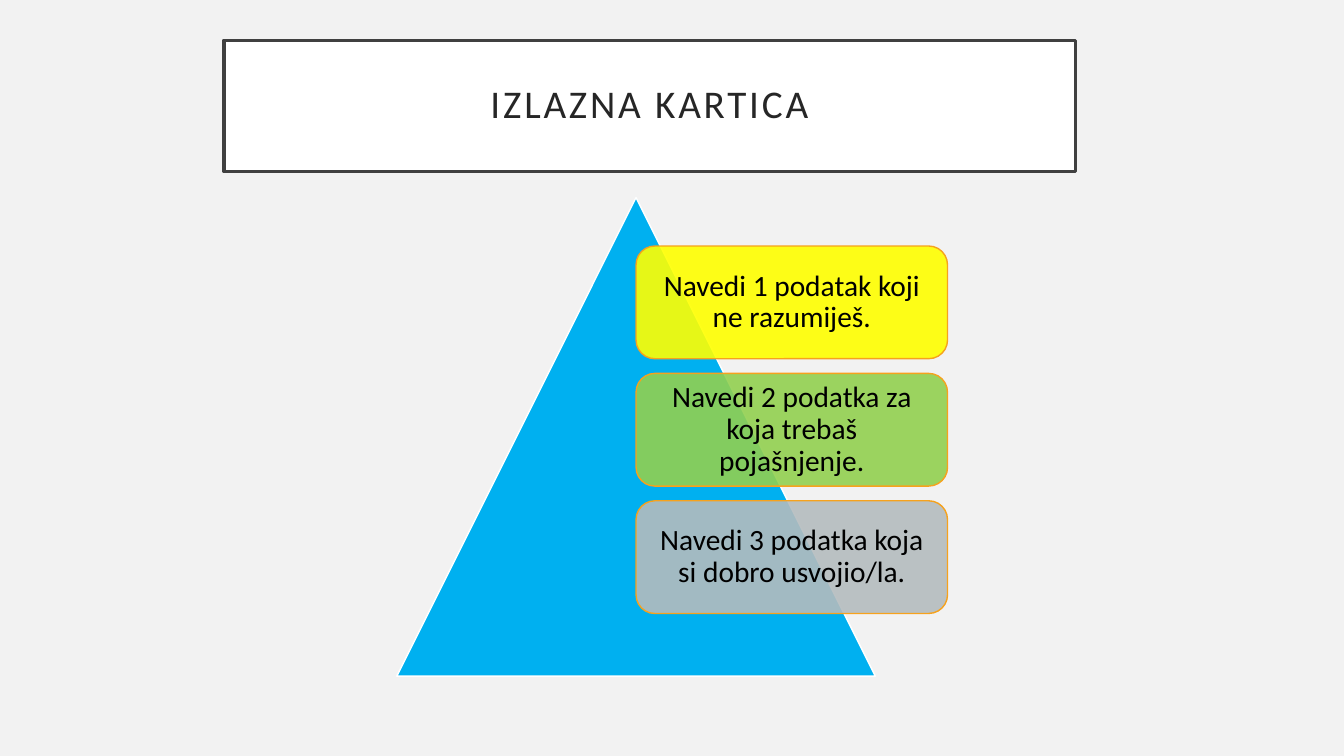
from dataclasses import dataclass

from lxml.etree import SubElement
from pptx import Presentation
from pptx.dml.color import RGBColor
from pptx.enum.shapes import MSO_SHAPE as Preset
from pptx.enum.text import MSO_ANCHOR as Anchor, PP_ALIGN as Align
from pptx.oxml.ns import qn
from pptx.util import Cm, Pt


@dataclass(frozen=True)
class Theme:
    font: str = "Calibri"
    title_size: int = 28
    card_size: int = 21
    background: str = "F2F2F2"
    white: str = "FFFFFF"
    title_line: str = "404040"
    title_text: str = "262626"
    pyramid: str = "00B0F0"
    card_line: str = "F6A21D"
    card_text: str = "000000"
    card_fills: tuple = ("FFFF00", "92D050", "B4BCBE")


THEME = Theme()
CARD_TEXTS = (
    "Navedi 1 podatak koji ne razumiješ.",
    "Navedi 2 podatka za koja trebaš pojašnjenje.",
    "Navedi 3 podatka koja si dobro usvojio/la.",
)


def color(value):
    return RGBColor.from_string(value)


def add_box(slide, preset, box, fill, line, width=1, opacity=100):
    shape = slide.shapes.add_shape(preset, *(Cm(length) for length in box))
    shape.shadow.inherit = False
    shape.fill.solid()
    shape.fill.fore_color.rgb = color(fill)
    if opacity < 100:
        fill_color = shape.fill._xPr.find(qn("a:solidFill"))[0]
        SubElement(fill_color, qn("a:alpha"), val=str(opacity * 1000))
    shape.line.color.rgb = color(line)
    shape.line.width = Pt(width)
    return shape


def write_text(shape, text, size, text_color, inset, spacing=0):
    frame = shape.text_frame
    frame.word_wrap = True
    frame.vertical_anchor = Anchor.MIDDLE
    frame.margin_left = frame.margin_right = Cm(inset)
    frame.margin_top = frame.margin_bottom = Cm(inset)
    paragraph = frame.paragraphs[0]
    paragraph.alignment = Align.CENTER
    paragraph.line_spacing = 0.9
    run = paragraph.add_run()
    run.text = text
    run.font.name = THEME.font
    run.font.size = Pt(size)
    run.font.color.rgb = color(text_color)
    if spacing:
        run.font._element.set("spc", str(spacing * 100))


def add_title(slide, text):
    shape = add_box(slide, Preset.RECTANGLE, (5.64, 1.02, 21.46, 3.3),
                    THEME.white, THEME.title_line, width=2.5)
    write_text(shape, text, THEME.title_size, THEME.title_text, inset=0.5, spacing=2)


def add_cards(slide, left=16.03, top=6.2, width=7.85, height=2.84, pitch=3.21):
    for index, (text, fill) in enumerate(zip(CARD_TEXTS, THEME.card_fills)):
        shape = add_box(slide, Preset.ROUNDED_RECTANGLE,
                        (left, top + index * pitch, width, height),
                        fill, THEME.card_line, opacity=90)
        write_text(shape, text, THEME.card_size, THEME.card_text, inset=0.23)


def main():
    presentation = Presentation()
    presentation.slide_width = Cm(33.87)
    presentation.slide_height = Cm(19.05)
    slide = presentation.slides.add_slide(presentation.slide_layouts[6])
    slide.background.fill.solid()
    slide.background.fill.fore_color.rgb = color(THEME.background)
    add_title(slide, "IZLAZNA KARTICA")
    add_box(slide, Preset.ISOSCELES_TRIANGLE, (10, 4.98, 12.06, 12.06),
            THEME.pyramid, THEME.white)
    add_cards(slide)
    presentation.save("out.pptx")


if __name__ == "__main__":
    main()
